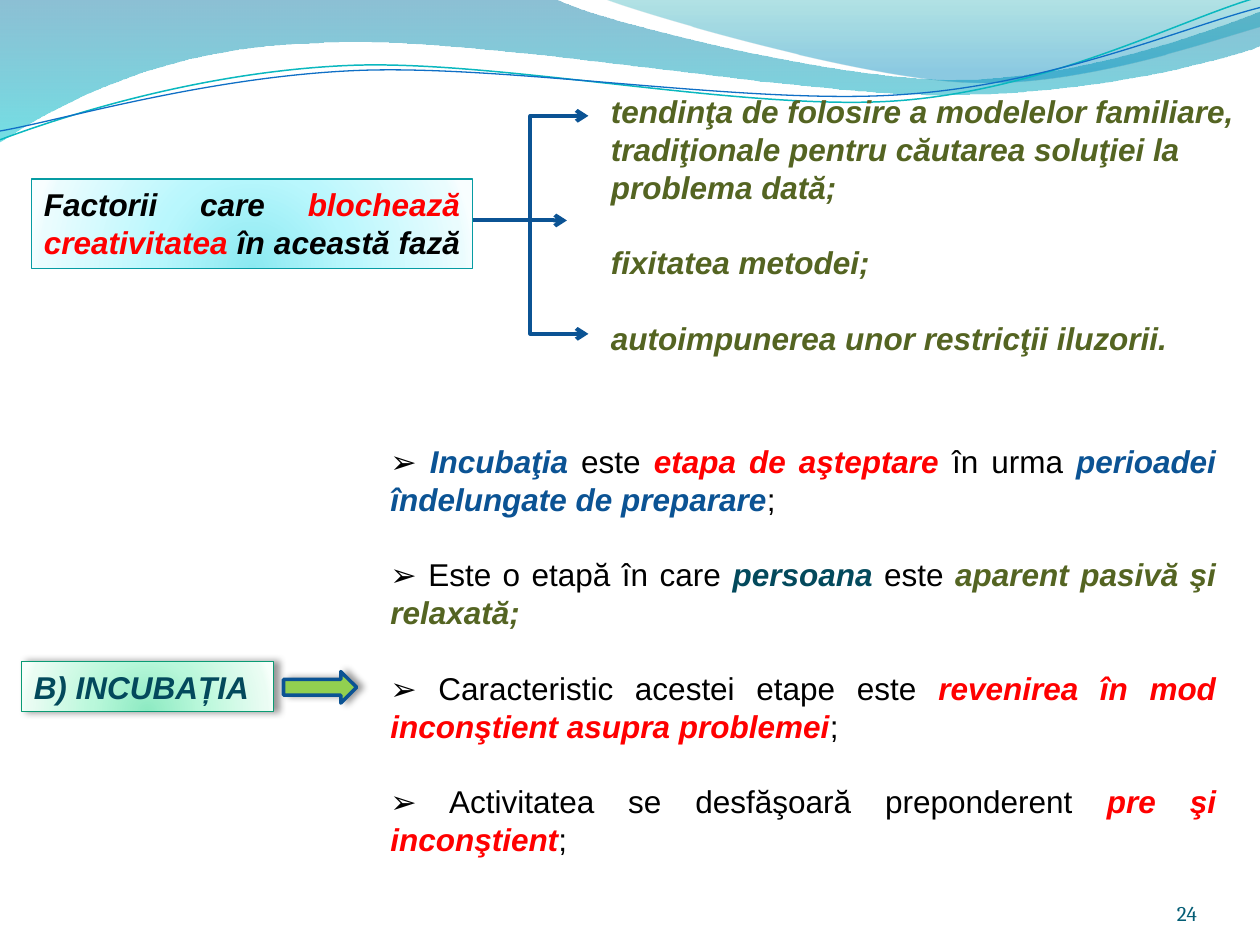
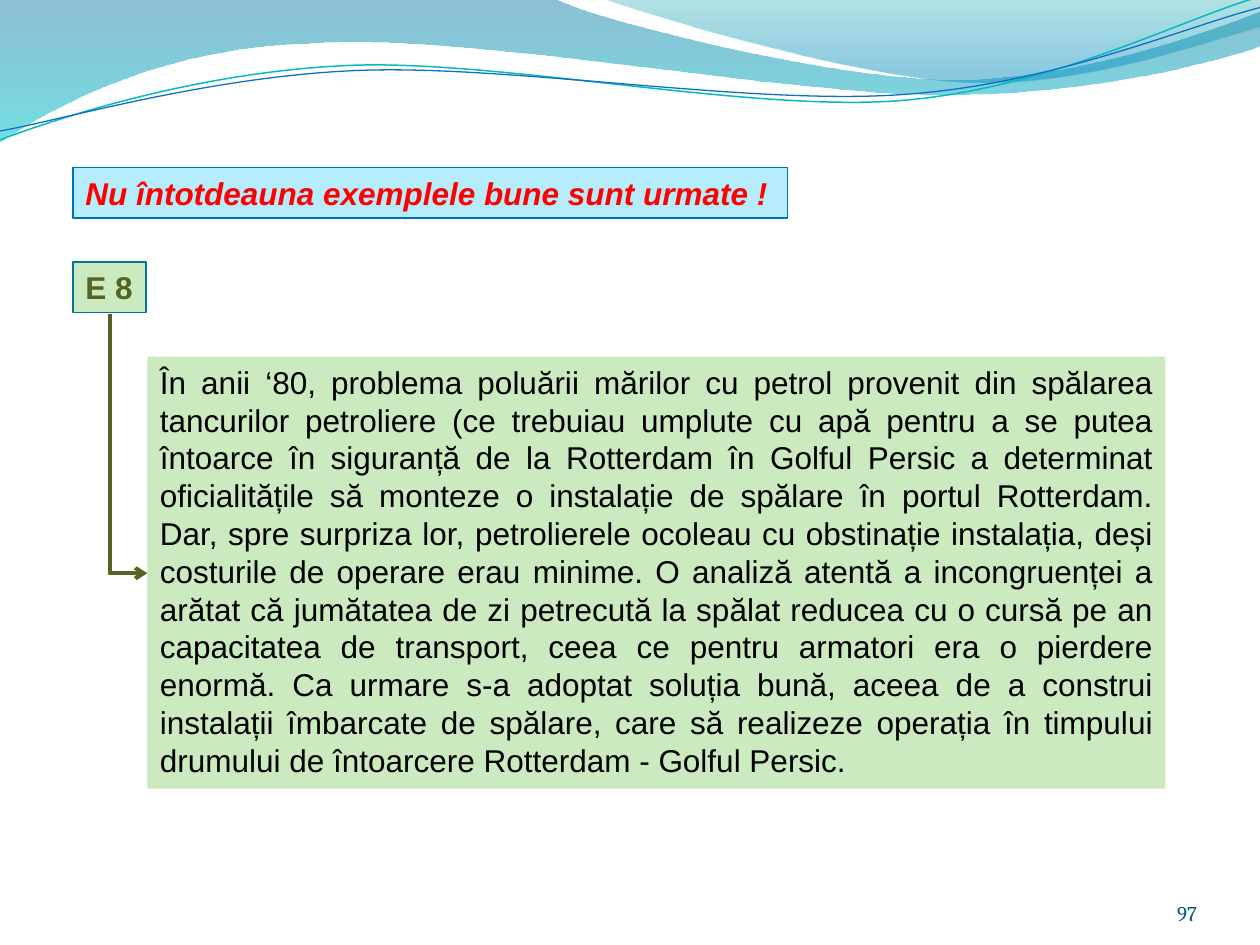
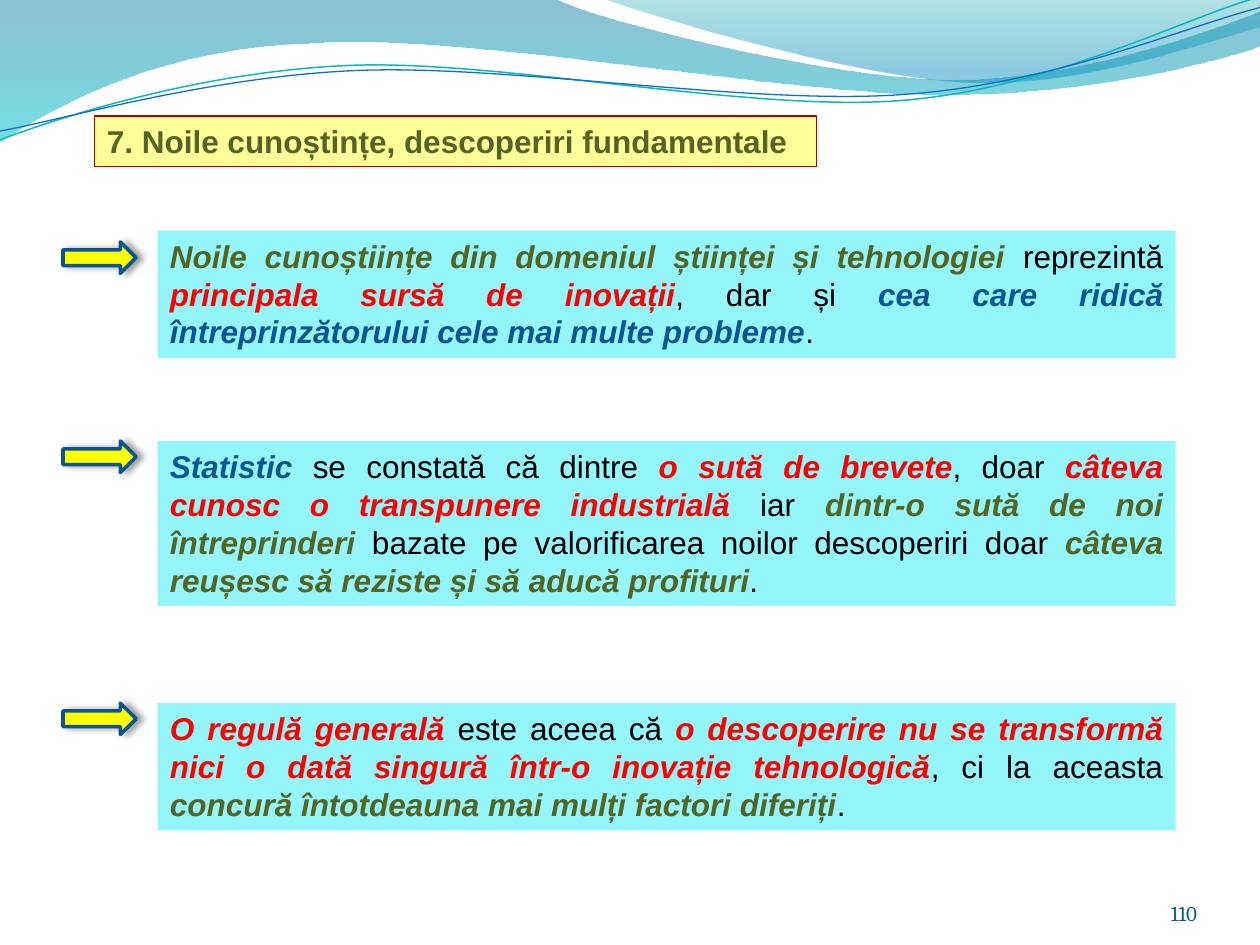
from pptx import Presentation
from pptx.dml.color import RGBColor
from pptx.enum.shapes import MSO_CONNECTOR, MSO_SHAPE
from pptx.enum.text import MSO_ANCHOR, PP_ALIGN
from pptx.oxml import parse_xml
from pptx.oxml.ns import nsdecls, qn
from pptx.util import Inches, Pt

ELBOW = MSO_CONNECTOR.ELBOW
ARROW, RECT = MSO_SHAPE.RIGHT_ARROW, MSO_SHAPE.RECTANGLE
TOP, MIDDLE, BOTTOM = MSO_ANCHOR.TOP, MSO_ANCHOR.MIDDLE, MSO_ANCHOR.BOTTOM
LEFT, RIGHT, JUSTIFY = PP_ALIGN.LEFT, PP_ALIGN.RIGHT, PP_ALIGN.JUSTIFY

BLACK = RGBColor(0x00, 0x00, 0x00)
RED = RGBColor(0xFF, 0x00, 0x00)
BLUE = RGBColor(0x0B, 0x53, 0x94)
OLIVE = RGBColor(0x54, 0x64, 0x22)
TEAL = RGBColor(0x03, 0x49, 0x5C)
NUMBER = RGBColor(0x04, 0x5D, 0x75)
LIME = RGBColor(0x92, 0xD0, 0x50)
YELLOW = RGBColor(0xFF, 0xFF, 0x00)
CREAM = RGBColor(0xFF, 0xFF, 0x99)
CRIMSON = RGBColor(0xC0, 0x00, 0x00)
SKY = RGBColor(0xB5, 0xED, 0xFD)
AZURE = RGBColor(0x00, 0x70, 0xC0)
MINT = RGBColor(0xCB, 0xEA, 0xC0)
OCEAN = RGBColor(0x00, 0x74, 0xA1)
AQUA = RGBColor(0x94, 0xF5, 0xFA)
CYAN_EDGE = RGBColor(0x06, 0x9C, 0xA3)
GREEN_EDGE = RGBColor(0x0A, 0x9B, 0x74)
WAVE_CYAN = RGBColor(0x0A, 0xB8, 0xBF)
WAVE_BLUE = RGBColor(0x0F, 0x6F, 0xC6)

FONT, SIZE = "Arial", 18
GAP = 21.6  # one text line, in points

DOWN = '<a:lin ang="5400000" scaled="1"/>'
ROUND = ('<a:path path="circle"><a:fillToRect l="50000" t="130000" '
         'r="50000" b="-30000"/></a:path>')
CYAN_GLOW = [(0, "8BE9F1", 100), (43, "B9F7FD", 100),
             (93, "EAFCFE", 100), (100, "F8FEFF", 100)]
GREEN_GLOW = [(0, "8DEAC2", 100), (43, "BAF8DB", 100),
              (93, "EAFCF3", 100), (100, "F7FFFB", 100)]

# Each wave is a list of knots: 2 numbers for a line, 6 for a curve.
BANDS = [
    ([(0, 0), (4.4, -0.01), (4.76, 0.17, 6.64, 0.63, 7.58, 0.63),
      (8.53, 0.63, 9.58, 0.26, 10, 0.09), (10.01, 0.36),
      (9.83, 0.44, 8.7, 0.76, 7.46, 0.75),
      (6.22, 0.75, 3.82, 0.28, 2.57, 0.34),
      (1.29, 0.36, 0.46, 0.83, -0.01, 1.13), (0, 0)],
     [(0, "0074A1", 45), (100, "00C6CF", 55)]),
    ([(4.79, -0.01), (5.09, 0.11, 6.82, 0.62, 7.69, 0.65),
      (8.56, 0.69, 9.61, 0.32, 10, 0.21), (10, 0), (4.79, -0.01)],
     [(0, "00A1A9", 30), (80, "008BBF", 45)]),
]
STRANDS = [
    ([(0, 1.11), (0.48, 0.93, 1.58, 0.57, 2.77, 0.52),
      (3.95, 0.47, 5.93, 0.89, 7.13, 0.8),
      (8.33, 0.71, 9.38, 0.15, 9.98, -0.02)], WAVE_CYAN, 0.85),
    ([(0, 1.04), (0.47, 0.96, 1.64, 0.61, 2.83, 0.56),
      (4.03, 0.51, 5.97, 0.84, 7.17, 0.75),
      (8.36, 0.67, 9.41, 0.21, 10, 0.06)], WAVE_BLUE, 0.75),
]


def blend(shape, stops, kind):
    """Fill with a gradient of (position, colour, opacity) stops."""
    shape.fill.gradient()
    marks = "".join(
        f'<a:gs pos="{pos * 1000}"><a:srgbClr val="{tone}">'
        f'<a:alpha val="{alpha * 1000}"/></a:srgbClr></a:gs>'
        for pos, tone, alpha in stops)
    grad = parse_xml(f'<a:gradFill {nsdecls("a")} rotWithShape="1">'
                     f'<a:gsLst>{marks}</a:gsLst>{kind}</a:gradFill>')
    props = shape.element.spPr
    props.replace(props.find(qn("a:gradFill")), grad)


def shade(shape):
    """Cast a soft shadow to the right."""
    shape.shadow.inherit = False
    shape.element.spPr.find(qn("a:effectLst")).append(parse_xml(
        f'<a:outerShdw {nsdecls("a")} blurRad="{Pt(4)}" dist="{Pt(3)}" '
        'dir="0" algn="ctr" rotWithShape="0"><a:srgbClr val="000000">'
        '<a:alpha val="40000"/></a:srgbClr></a:outerShdw>'))


def wave(slide, knots, close):
    """Draw an outline, then bend the pieces that are curves."""
    points = [(Inches(knot[i]), Inches(knot[i + 1]))
              for knot in knots for i in range(0, len(knot), 2)]
    pen = slide.shapes.build_freeform(*points[0])
    pen.add_line_segments(points[1:], close=close)
    shape = pen.convert_to_shape()
    shape.shadow.inherit = False
    legs = iter(list(shape.element.spPr.iter(qn("a:lnTo"))))
    for knot in knots[1:]:
        leg = next(legs)
        if len(knot) == 6:
            curve = parse_xml(f'<a:cubicBezTo {nsdecls("a")}/>')
            leg.addprevious(curve)
            for part in (leg, next(legs), next(legs)):
                curve.append(part[0])
                part.getparent().remove(part)
    return shape


def write(box, paras, align=LEFT, anchor=TOP, wrap=True, bold=True,
          italic=True, font=FONT, size=SIZE):
    """Fill a box; a run is (text, colour), plain black without a colour."""
    frame = box.text_frame
    frame.word_wrap = wrap
    frame.vertical_anchor = anchor
    for i, runs in enumerate(paras):
        para = frame.add_paragraph() if i else frame.paragraphs[0]
        para.alignment = align
        para.font.name, para.font.size = font, Pt(size)
        if i:
            para.space_before = Pt(GAP)
        for text, tone in runs:
            run = para.add_run()
            run.text = text
            run.font.color.rgb = tone or BLACK
            run.font.bold = tone is not None and bold
            run.font.italic = tone is not None and italic


def note(slide, x, y, w, h, paras, **style):
    box = slide.shapes.add_textbox(Inches(x), Inches(y), Inches(w), Inches(h))
    write(box, paras, **style)
    return box


def panel(slide, x, y, w, h, paras, fill, edge=None, **style):
    box = slide.shapes.add_shape(
        RECT, Inches(x), Inches(y), Inches(w), Inches(h))
    box.shadow.inherit = False
    if isinstance(fill, list):
        blend(box, fill, ROUND)
    else:
        box.fill.solid()
        box.fill.fore_color.rgb = fill
    if edge is None:
        box.line.fill.background()
    else:
        box.line.color.rgb = edge
        box.line.width = Pt(0.75)
    write(box, paras, **style)
    return box


def arrow(slide, x, y, fill):
    shape = slide.shapes.add_shape(
        ARROW, Inches(x), Inches(y), Inches(0.58), Inches(0.25))
    shape.fill.solid()
    shape.fill.fore_color.rgb = fill
    shape.line.color.rgb = BLUE
    shape.line.width = Pt(2)
    shade(shape)


def link(slide, x1, y1, x2, y2, tone):
    line = slide.shapes.add_connector(
        ELBOW, Inches(x1), Inches(y1), Inches(x2), Inches(y2))
    line.line.color.rgb = tone
    line.line.width = Pt(2.25)
    props = line.element.spPr
    props.find(qn("a:ln")).append(
        parse_xml(f'<a:tailEnd {nsdecls("a")} type="arrow"/>'))
    props.append(parse_xml(f'<a:effectLst {nsdecls("a")}/>'))
    return line


def corner(slide, x1, y1, x2, y2, tone):
    """Link that runs down, then right, with a single bend."""
    midx, midy = (x1 + x2) / 2, (y1 + y2) / 2
    halfw, halfh = (y2 - y1) / 2, (x2 - x1) / 2
    line = link(slide, midx + halfw, midy - halfh,
                midx - halfw, midy + halfh, tone)
    props = line.element.spPr
    props.find(qn("a:xfrm")).set("rot", str(270 * 60000))
    props.find(qn("a:prstGeom")).set("prst", "bentConnector2")


def start(deck, number):
    """Add a slide with the waves and its number."""
    slide = deck.slides.add_slide(deck.slide_layouts[6])
    for knots, stops in BANDS:
        band = wave(slide, knots, True)
        blend(band, stops, DOWN)
        band.line.fill.background()
    for knots, tone, width in STRANDS:
        strand = wave(slide, knots, False)
        strand.fill.background()
        strand.line.color.rgb = tone
        strand.line.width = Pt(width)
    box = note(slide, 8.67, 6.95, 0.83, 0.4, [[(number, NUMBER)]],
               align=RIGHT, anchor=BOTTOM, bold=False, italic=False,
               font="Cambria", size=12)
    frame = box.text_frame
    frame.margin_left = frame.margin_right = 0
    frame.margin_top = frame.margin_bottom = 0
    return slide


def phases(deck):
    slide = start(deck, "24")
    panel(slide, 0.25, 1.42, 3.5, 0.71, [[
        ("Factorii care ", BLACK), ("blochează creativitatea ", RED),
        ("în această fază ", BLACK)]],
        CYAN_GLOW, CYAN_EDGE, align=JUSTIFY)
    note(slide, 4.75, 0.67, 5.25, 2.22, [
        [("tendinţa de folosire a modelelor familiare, tradiţionale pentru "
          "căutarea soluţiei la problema dată;", OLIVE)],
        [("fixitatea metodei;", OLIVE)],
        [("autoimpunerea unor restricţii iluzorii.", OLIVE)]], anchor=MIDDLE)
    for x1, x2, y in [(3.75, 4.67, 0.92), (3.83, 4.5, 1.75),
                      (3.75, 4.67, 2.65)]:
        link(slide, x1, 1.75, x2, y, BLUE)
    shade(panel(slide, 0.17, 5.25, 2, 0.4, [[("B) INCUBAȚIA", TEAL)]],
                GREEN_GLOW, GREEN_EDGE, align=JUSTIFY))
    arrow(slide, 2.25, 5.33, LIME)
    note(slide, 3, 3.46, 6.75, 4.04, [
        [("➢ ", None), ("Incubaţia", BLUE), (" este ", None),
         ("etapa de aşteptare ", RED), ("în urma ", None),
         ("perioadei îndelungate de preparare", BLUE), (";", None)],
        [("➢ Este o etapă în care ", None), ("persoana", TEAL),
         (" este ", None), ("aparent pasivă şi relaxată;", OLIVE)],
        [("➢ Caracteristic acestei etape este ", None),
         ("revenirea în mod inconştient asupra problemei", RED), (";", None)],
        [("➢ Activitatea se desfăşoară preponderent ", None),
         ("pre şi inconştient", RED), (";", None)]], align=JUSTIFY)


def example(deck):
    slide = start(deck, "97")
    panel(slide, 0.58, 1.33, 5.67, 0.4,
          [[("Nu întotdeauna exemplele bune sunt urmate !", RED)]],
          SKY, AZURE, wrap=False)
    panel(slide, 0.58, 2.08, 0.58, 0.4, [[("E 8", OLIVE)]],
          MINT, OCEAN, wrap=False, italic=False)
    panel(slide, 1.17, 2.83, 8.08, 3.43, [[(
        "În anii ‘80, problema poluării mărilor cu petrol provenit din "
        "spălarea tancurilor petroliere (ce trebuiau umplute cu apă pentru a "
        "se putea întoarce în siguranță de la Rotterdam în Golful Persic a "
        "determinat oficialitățile să monteze o instalație de spălare în "
        "portul Rotterdam. Dar, spre surpriza lor, petrolierele ocoleau cu "
        "obstinație instalația, deși costurile de operare erau minime. O "
        "analiză atentă a incongruenței a arătat că jumătatea de zi petrecută "
        "la spălat reducea cu o cursă pe an capacitatea de transport, ceea ce "
        "pentru armatori era o pierdere enormă. Ca urmare s-a adoptat soluția "
        "bună, aceea de a construi instalații îmbarcate de spălare, care să "
        "realizeze operația în timpului drumului de întoarcere Rotterdam - "
        "Golful Persic.", None)]], MINT, align=JUSTIFY)
    corner(slide, 0.87, 2.49, 1.17, 4.55, OLIVE)


def findings(deck):
    slide = start(deck, "110")
    panel(slide, 0.75, 0.92, 5.73, 0.4,
          [[("7. Noile cunoștințe, descoperiri fundamentale", OLIVE)]],
          CREAM, CRIMSON, wrap=False, italic=False)
    facts = [
        (1.83, 1.01, 1.92, [
            ("Noile cunoștiințe din domeniul științei și tehnologiei ", OLIVE),
            ("reprezintă ", None), ("principala sursă de inovații", RED),
            (", dar și ", None),
            ("cea care ridică întreprinzătorului cele mai multe probleme",
             BLUE), (". ", None)]),
        (3.5, 1.31, 3.5, [
            ("Statistic", BLUE), (" se constată că dintre ", None),
            ("o sută de brevete", RED), (", doar ", None),
            ("câteva cunosc o transpunere industrială", RED), (" iar ", None),
            ("dintr-o sută de noi întreprinderi ", OLIVE),
            ("bazate pe valorificarea noilor descoperiri doar ", None),
            ("câteva reușesc să reziste și să aducă profituri", OLIVE),
            (". ", None)]),
        (5.58, 1.01, 5.58, [
            ("O regulă generală ", RED), ("este aceea că ", None),
            ("o descoperire nu se transformă nici o dată singură într-o "
             "inovație tehnologică", RED), (", ci la aceasta ", None),
            ("concură întotdeauna mai mulți factori diferiți", OLIVE),
            (". ", None)]),
    ]
    for y, h, tip, runs in facts:
        panel(slide, 1.25, y, 8.08, h, [runs], AQUA, align=JUSTIFY)
        arrow(slide, 0.5, tip, YELLOW)


def main():
    deck = Presentation()
    deck.slide_width, deck.slide_height = Inches(10), Inches(7.5)
    phases(deck)
    example(deck)
    findings(deck)
    deck.save("out.pptx")


if __name__ == "__main__":
    main()
